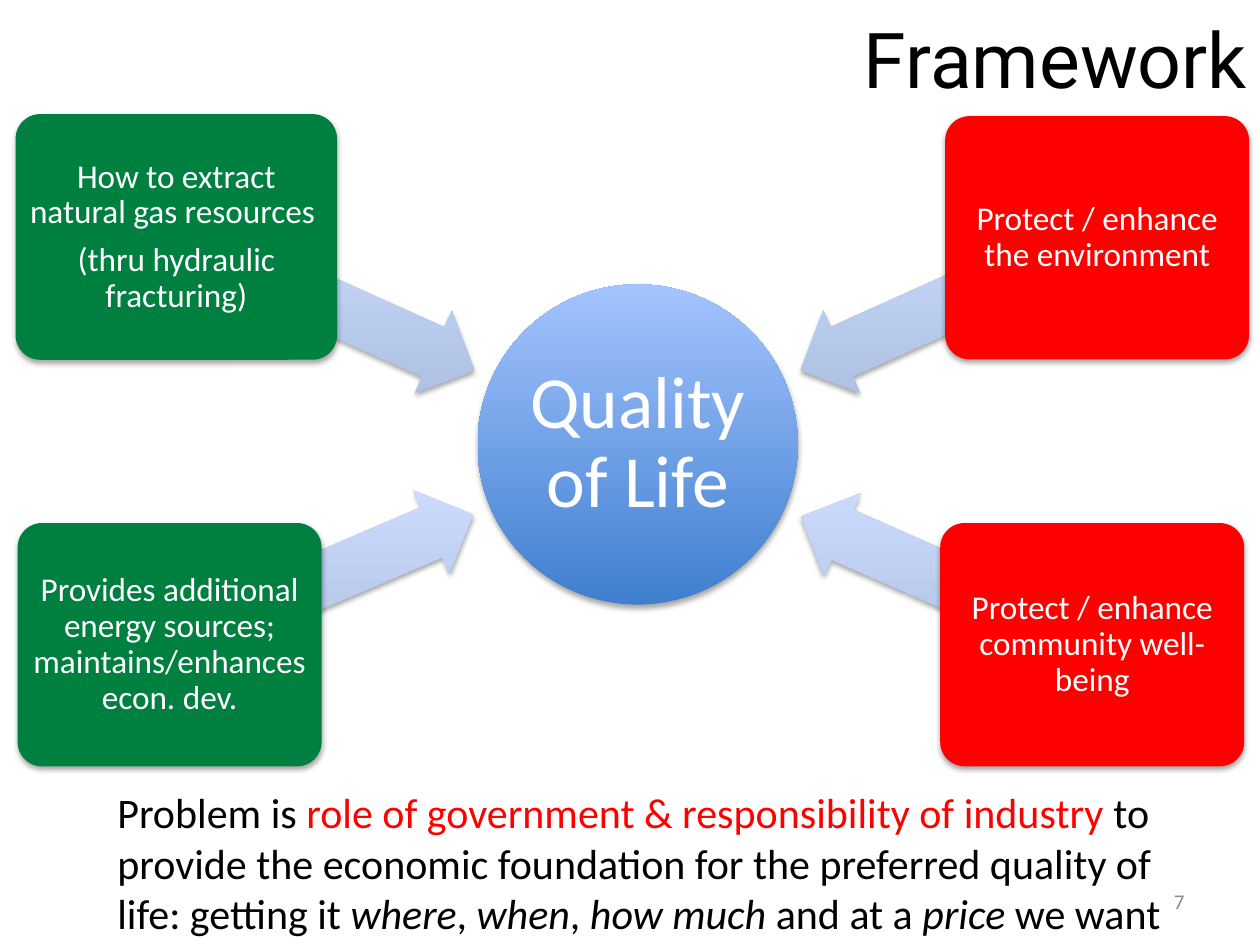
"""Build the Framework slide: four goals pointing at quality of life."""
from pptx import Presentation
from pptx.dml.color import RGBColor
from pptx.enum import shapes, text
from pptx.oxml import parse_xml
from pptx.oxml.ns import nsdecls, qn
from pptx.util import Pt

TITLE = "Framework"
HUB = "Quality of Life"
GREEN, RED, BLACK, WHITE = "008040", "FF0000", "000000", "FFFFFF"
HUB_BLUES = ("3F7FCE", "A4C4FF")
ARROW_BLUES = ("ADBFE1", "CCDDFF")
GOALS = [
    {"box": (10.1, 298.9, 173.7, 139), "fill": GREEN,
     "arrow": (89.3, 305.3, 188.6, 51.8), "turn": 156.8,
     "lines": ["Provides additional energy sources; maintains/enhances econ. dev."]},
    {"box": (8.9, 65.2, 183.7, 140.4), "fill": GREEN,
     "arrow": (92.9, 147.6, 186.5, 51.8), "turn": 204.2,
     "lines": ["How to extract natural gas resources ", "(thru hydraulic fracturing)"]},
    {"box": (540.1, 66.4, 173.7, 139), "fill": RED,
     "arrow": (449.3, 147.6, 185.8, 51.8), "turn": 335.8,
     "lines": ["Protect / enhance the environment"]},
    {"box": (537.3, 298.9, 173.7, 139), "fill": RED,
     "arrow": (450, 306, 182.2, 51.8), "turn": 23.8,
     "lines": ["Protect / enhance community well-being"]},
]
PROBLEM = [
    ("Problem is ", BLACK, False),
    ("role of government & responsibility of industry", RED, False),
    (" to provide the economic foundation for the preferred quality of life: getting it ",
     BLACK, False),
    ("where", BLACK, True), (", ", BLACK, False),
    ("when", BLACK, True), (", ", BLACK, False),
    ("how much", BLACK, True), (" and at a ", BLACK, False),
    ("price", BLACK, True), (" we want", BLACK, False),
]
PAGE = "7"


def color(value):
    return RGBColor.from_string(value)


def add_run(paragraph, words, size, ink, font="Calibri", italic=False):
    run = paragraph.add_run()
    run.text = words
    run.font.size, run.font.name, run.font.italic = Pt(size), font, italic
    run.font.color.rgb = color(ink)


def add_shape(slide, kind, place, fills):
    shape = slide.shapes.add_shape(kind, *map(Pt, place))
    shape.line.fill.background()
    if len(fills) == 1:
        shape.fill.solid()
        shape.fill.fore_color.rgb = color(fills[0])
    else:
        shape.fill.gradient()
        shape.fill.gradient_angle = 90
        for stop, value in zip(shape.fill.gradient_stops, fills):
            stop.color.rgb = color(value)
        shape._element.spPr.find(qn("a:gradFill")).set("rotWithShape", "0")
    shape._element.spPr.append(parse_xml(
        f'<a:effectLst {nsdecls("a")}><a:outerShdw blurRad="{Pt(3.1)}" dist="{Pt(1.8)}" '
        'dir="5400000" rotWithShape="0"><a:srgbClr val="000000"><a:alpha val="35000"/>'
        '</a:srgbClr></a:outerShdw></a:effectLst>'))
    return shape


def write_centred(shape, lines, size, inset):
    frame = shape.text_frame
    frame.word_wrap = True
    frame.vertical_anchor = text.MSO_ANCHOR.MIDDLE
    frame.margin_left = frame.margin_right = Pt(inset)
    frame.margin_top = frame.margin_bottom = Pt(inset)
    for index, line in enumerate(lines):
        paragraph = frame.add_paragraph() if index else frame.paragraphs[0]
        paragraph.alignment = text.PP_ALIGN.CENTER
        paragraph.line_spacing = 0.9
        paragraph.space_after = Pt(size * 0.35)
        add_run(paragraph, line, size, WHITE)


def add_text_box(slide, place):
    frame = slide.shapes.add_textbox(*map(Pt, place)).text_frame
    frame.word_wrap = True
    return frame


def main():
    deck = Presentation()
    deck.slide_width, deck.slide_height = Pt(720), Pt(540)
    slide = deck.slides.add_slide(deck.slide_layouts[5])

    title = slide.shapes.title
    title.left, title.top, title.width, title.height = map(Pt, (342, 0, 378, 66))
    title.text_frame.vertical_anchor = text.MSO_ANCHOR.MIDDLE
    heading = title.text_frame.paragraphs[0]
    heading.alignment = text.PP_ALIGN.RIGHT
    add_run(heading, TITLE, 44, BLACK, "Roboto")

    kinds = shapes.MSO_SHAPE
    hub = add_shape(slide, kinds.OVAL, (272.9, 162.5, 183, 183), HUB_BLUES)
    write_centred(hub, [HUB], 42, 2)

    for goal in GOALS:
        arrow = add_shape(slide, kinds.LEFT_ARROW, goal["arrow"], ARROW_BLUES)
        arrow.rotation = goal["turn"]
        arrow.adjustments[0], arrow.adjustments[1] = 0.6, 0.5
        box = add_shape(slide, kinds.ROUNDED_RECTANGLE, goal["box"], [goal["fill"]])
        box.adjustments[0] = 0.1
        write_centred(box, goal["lines"], 19, 2.7)

    problem = add_text_box(slide, (60, 446, 618, 94)).paragraphs[0]
    for words, ink, italic in PROBLEM:
        add_run(problem, words, 24, ink, italic=italic)

    footer = add_text_box(slide, (516, 500.5, 168, 28.8))
    footer.vertical_anchor = text.MSO_ANCHOR.MIDDLE
    footer.paragraphs[0].alignment = text.PP_ALIGN.RIGHT
    add_run(footer.paragraphs[0], PAGE, 12, "8C8C8C")

    deck.save("out.pptx")


if __name__ == "__main__":
    main()
